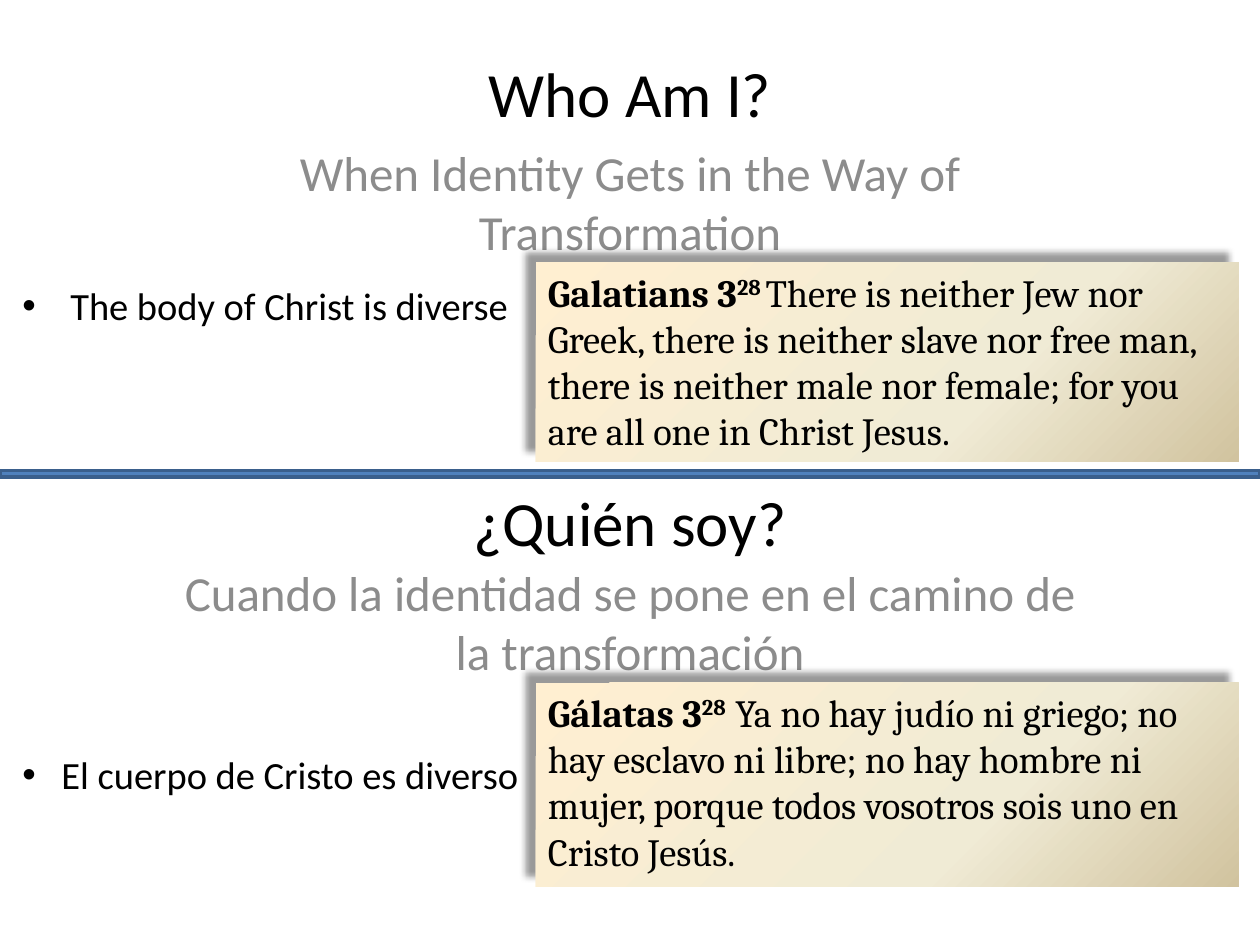
import pptx
import pptx.util
import pptx.dml.color
import pptx.enum.shapes
import pptx.enum.text
import pptx.oxml
import pptx.oxml.ns

COLORS = {"ink": "000000", "muted": "8C8C8C", "rule": "4F81BD", "rule_edge": "3A5F8C",
          "parchment": "FFEFD1", "parchment_mid": "F0EBD5", "parchment_end": "D1C39F"}
WIDTH, HEIGHT = pptx.util.Inches(10), pptx.util.Inches(7.5)
ALIGN = pptx.enum.text.PP_ALIGN
ANCHOR = pptx.enum.text.MSO_ANCHOR


def rgb(name):
    """Return a named palette colour."""
    return pptx.dml.color.RGBColor.from_string(COLORS[name])


def inside(box, left, top, width, height):
    """Turn shares of a box into left, top, width and height."""
    x, y, w, h = box
    return [round(v) for v in (x + left * w, y + top * h, width * w, height * h)]


def place(shape, box):
    """Move a shape to a box."""
    shape.left, shape.top, shape.width, shape.height = box


def style(run, size, color="ink", font="Calibri", bold=False):
    """Format one run."""
    run.font.size = pptx.util.Pt(size)
    run.font.name = font
    run.font.bold = bold
    run.font.color.rgb = rgb(color)


def write_heading(shape, text, size, color="ink", anchor=ANCHOR.TOP, space=0):
    """Write one centred line of heading text."""
    frame = shape.text_frame
    frame.word_wrap = True
    frame.auto_size = pptx.enum.text.MSO_AUTO_SIZE.NONE
    frame.vertical_anchor = anchor
    frame.text = text
    paragraph = frame.paragraphs[0]
    paragraph.alignment = ALIGN.CENTER
    paragraph.space_before = pptx.util.Pt(space)
    style(paragraph.runs[0], size, color)


def add_point(slide, box, text, indent):
    """Add a bulleted point with a hanging indent."""
    frame = slide.shapes.add_textbox(*box).text_frame
    frame.word_wrap = True
    frame.text = text
    paragraph = frame.paragraphs[0]
    style(paragraph.runs[0], 22)
    hang = pptx.util.Inches(indent)
    properties = paragraph._p.get_or_add_pPr()
    properties.set("marL", str(hang))
    properties.set("indent", str(-hang))
    for tag, key, value in (("buFont", "typeface", "Arial"), ("buChar", "char", "•")):
        bullet = pptx.oxml.parse_xml(f'<a:{tag} {pptx.oxml.ns.nsdecls("a")} {key}="{value}"/>')
        properties.append(bullet)


def apply_parchment(shape):
    """Give a shape a three-stop gradient and an upper-left shadow."""
    shape.line.fill.background()
    namespace = pptx.oxml.ns.nsdecls("a")
    stops = "".join(
        f'<a:gs pos="{position * 1000}"><a:srgbClr val="{COLORS[name]}"/></a:gs>'
        for position, name in ((0, "parchment"), (65, "parchment_mid"), (100, "parchment_end")))
    gradient = (f'<a:gradFill {namespace} rotWithShape="1"><a:gsLst>{stops}</a:gsLst>'
                '<a:lin ang="2700000" scaled="0"/></a:gradFill>')
    shadow = (f'<a:effectLst {namespace}><a:outerShdw blurRad="{pptx.util.Pt(4)}" '
              f'dist="{pptx.util.Pt(8)}" dir="13500000" algn="br" rotWithShape="0">'
              f'<a:srgbClr val="{COLORS["ink"]}"><a:alpha val="40000"/></a:srgbClr>'
              '</a:outerShdw></a:effectLst>')
    properties = shape._element.spPr
    properties.find(pptx.oxml.ns.qn("a:prstGeom")).addnext(pptx.oxml.parse_xml(gradient))
    properties.append(pptx.oxml.parse_xml(shadow))


def add_verse(slide, box, chapter, number, words):
    """Add a scripture panel with a raised verse number."""
    panel = slide.shapes.add_shape(pptx.enum.shapes.MSO_SHAPE.RECTANGLE, *box)
    apply_parchment(panel)
    frame = panel.text_frame
    frame.word_wrap = True
    frame.vertical_anchor = ANCHOR.TOP
    paragraph = frame.paragraphs[0]
    paragraph.alignment = ALIGN.LEFT
    for text, bold, raised in ((chapter, True, False), (number, True, True), (words, False, False)):
        run = paragraph.add_run()
        run.text = text
        style(run, 22, font="Cambria", bold=bold)
        if raised:
            run.font._element.set("baseline", "30000")


def add_language(slide, box, title, subtitle, content, rows, subtitle_width):
    """Fill one language's half of the slide."""
    place(title, inside(box, 0.075, rows["title"], 0.85, 0.44))
    write_heading(title, content["title"], 36, anchor=ANCHOR.MIDDLE)
    place(subtitle, inside(box, (1 - subtitle_width) / 2, rows["subtitle"], subtitle_width, 0.52))
    write_heading(subtitle, content["subtitle"], 28, "muted", space=5.6)
    add_point(slide, inside(box, 0.008, rows["point"], 0.5, 0.13), content["point"], rows["indent"])
    add_verse(slide, inside(box, 0.425, 0.57, 0.558, rows["verse"]), *content["verse"])


def add_divider(slide, box):
    """Add the bar between the two languages."""
    divider = slide.shapes.add_shape(pptx.enum.shapes.MSO_SHAPE.RECTANGLE, *box)
    divider.shadow.inherit = False
    divider.fill.solid()
    divider.fill.fore_color.rgb = rgb("rule")
    divider.line.color.rgb = rgb("rule_edge")
    divider.line.width = pptx.util.Pt(2)


def main():
    """Build the bilingual slide."""
    deck = pptx.Presentation()
    deck.slide_width, deck.slide_height = WIDTH, HEIGHT
    slide = deck.slides.add_slide(deck.slide_layouts[0])
    page = (0, 0, WIDTH, HEIGHT)
    english = {
        "title": "Who Am I?",
        "subtitle": "When Identity Gets in the Way of Transformation",
        "point": "The body of Christ is diverse",
        "verse": ("Galatians 3", "28 ", "There is neither Jew nor Greek, there is neither slave nor "
                  "free man, there is neither male nor female; for you are all one in Christ Jesus.")}
    spanish = {
        "title": "¿Quién soy?",
        "subtitle": "Cuando la identidad se pone en el camino de la transformación",
        "point": "El cuerpo de Cristo es diverso",
        "verse": ("Gálatas 3", "28  ", "Ya no hay judío ni griego; no hay esclavo ni libre; no hay "
                  "hombre ni mujer, porque todos vosotros sois uno en Cristo Jesús.")}
    add_language(slide, inside(page, 0, 0, 1, 0.487), slide.shapes.title, slide.placeholders[1],
                 english, {"title": -0.02, "subtitle": 0.296, "point": 0.6, "verse": 0.433,
                           "indent": 0.38}, 0.7)
    add_divider(slide, inside(page, 0, 0.498, 1, 0.007))
    title, subtitle = (slide.shapes.add_textbox(*page) for _ in range(2))
    add_language(slide, inside(page, 0, 0.445, 1, 0.487), title, subtitle,
                 spanish, {"title": 0, "subtitle": 0.296, "point": 0.705, "verse": 0.443,
                           "indent": 0.31}, 0.732)
    deck.save("out.pptx")


if __name__ == "__main__":
    main()
